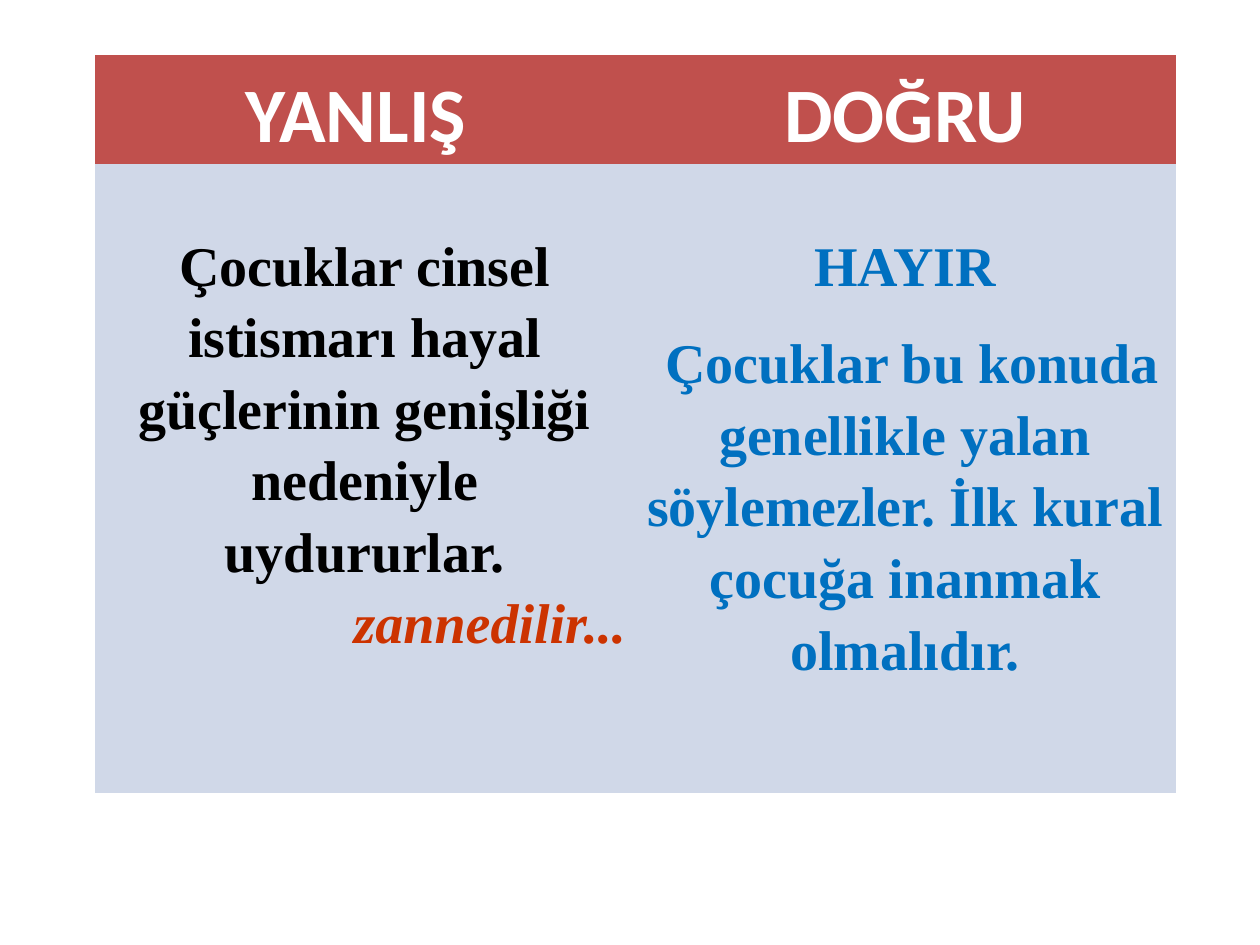
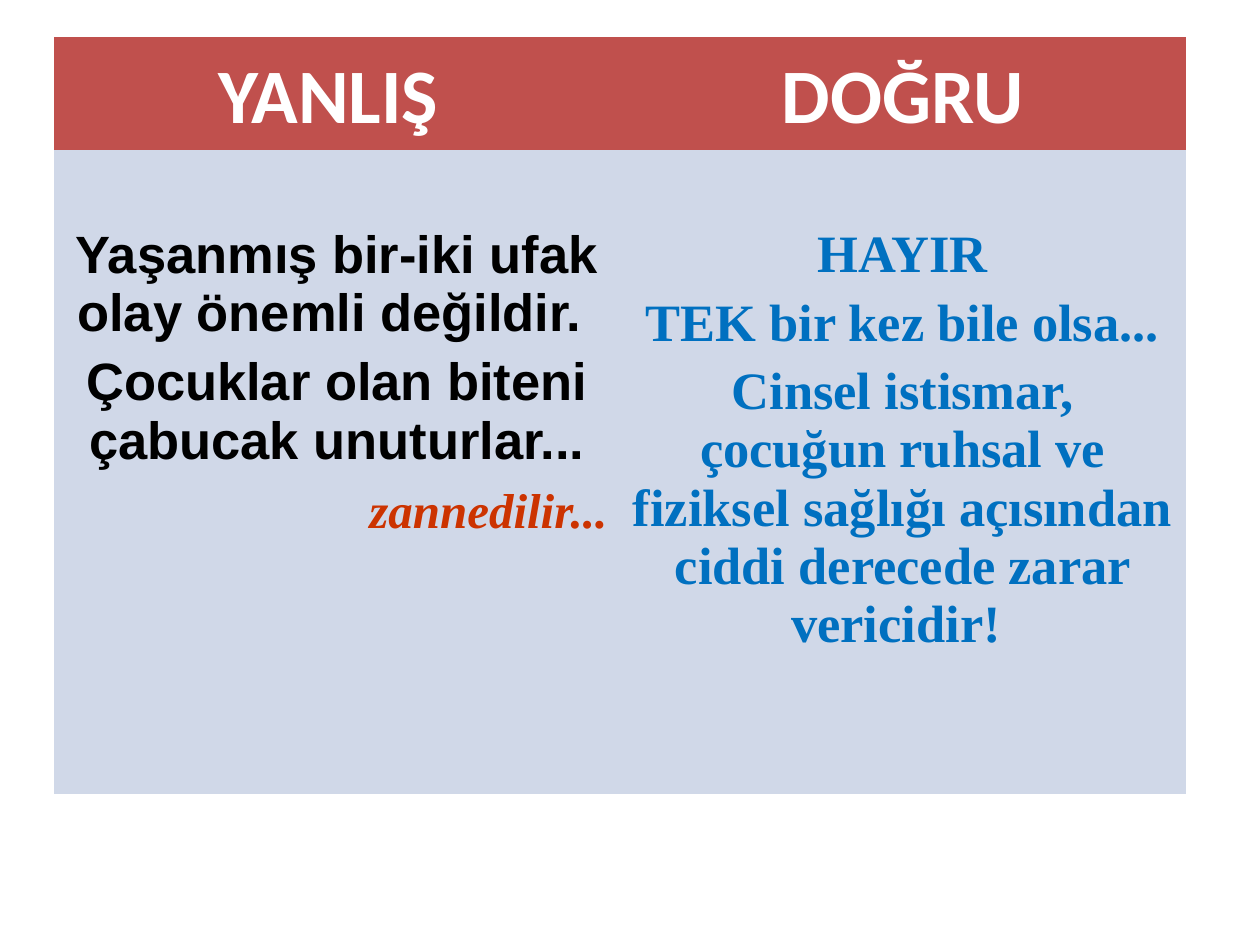
"""Builds two slides that set a common misbelief against the truth."""
from dataclasses import dataclass

from pptx import Presentation
from pptx import util as u
from pptx.dml.color import RGBColor
from pptx.enum import text
from pptx.oxml.ns import qn

RED, PALE, WHITE = "C0504D", "D0D8E8", "FFFFFF"
BLACK, BLUE, ORANGE = "000000", "0070C0", "CC3300"
SERIF, SANS, HEADING = "Times New Roman", "Arial", "Calibri"
CENTER, RIGHT = text.PP_ALIGN.CENTER, text.PP_ALIGN.RIGHT
NO_STYLE = "{2D5ABB26-0587-4C30-8999-92F81FD0307C}"


@dataclass(frozen=True)
class Para:
    """One paragraph and its look."""
    words: str
    size: int
    color: str
    font: str = SERIF
    align: int = CENTER
    italic: bool = False
    before: float = 0


@dataclass(frozen=True)
class Comparison:
    """One slide: table place, row heights, spacing and body paragraphs."""
    left: float
    top: float
    col_width: float
    row_heights: tuple[float, float]
    side_inset: float
    body_inset: float
    line_spacing: float
    wrong: list[Para]
    right: list[Para]


HEADINGS = [Para(words, 44, WHITE, HEADING) for words in ("YANLIŞ ", "DOĞRU")]

COMPARISONS = [
    Comparison(
        0.75, 0.44, 4.29, (0.86, 4.99), 0.07, 0.5, 1.15,
        [Para("Çocuklar cinsel istismarı hayal", 32, BLACK),
         Para("güçlerinin genişliği nedeniyle", 32, BLACK),
         Para("uydururlar.", 32, BLACK),
         Para("zannedilir...", 32, ORANGE, align=RIGHT, italic=True)],
        [Para("HAYIR", 32, BLUE),
         Para(" Çocuklar bu konuda genellikle yalan", 32, BLUE, before=15),
         Para("söylemezler. İlk kural çocuğa inanmak", 32, BLUE),
         Para("olmalıdır.", 32, BLUE)]),
    Comparison(
        0.43, 0.29, 4.49, (0.9, 5.11), 0.1, 0.6, 1.0,
        [Para("Yaşanmış bir-iki ufak olay önemli değildir. ", 30, BLACK, SANS),
         Para("Çocuklar olan biteni çabucak unuturlar...", 30, BLACK, SANS, before=6),
         Para("zannedilir...", 28, ORANGE, align=RIGHT, italic=True, before=8)],
        [Para("HAYIR", 30, BLUE),
         Para("TEK bir kez bile olsa...", 30, BLUE, before=6),
         Para("Cinsel istismar, çocuğun ruhsal ve fiziksel sağlığı açısından "
              "ciddi derecede zarar vericidir! ", 30, BLUE, before=6)]),
]


def rgb(color: str) -> RGBColor:
    return RGBColor.from_string(color)


def fill_cell(cell, paras: list[Para], fill: str, side: float, top: float,
              spacing: float) -> None:
    cell.fill.solid()
    cell.fill.fore_color.rgb = rgb(fill)
    cell.margin_left = cell.margin_right = u.Inches(side)
    cell.margin_top, cell.margin_bottom = u.Inches(top), u.Inches(0)
    tf = cell.text_frame
    tf.text = "\n".join(para.words for para in paras)
    for p, para in zip(tf.paragraphs, paras):
        p.alignment = para.align
        p.line_spacing = spacing
        p.space_before = u.Pt(para.before)
        for r in p.runs:
            r.font.name, r.font.size = para.font, u.Pt(para.size)
            r.font.bold, r.font.italic = True, para.italic
            r.font.color.rgb = rgb(para.color)


def add_comparison(prs, item: Comparison) -> None:
    s = prs.slides.add_slide(prs.slide_layouts[6])
    table = s.shapes.add_table(
        2, 2, u.Inches(item.left), u.Inches(item.top),
        u.Inches(2 * item.col_width), u.Inches(sum(item.row_heights))).table
    table.horz_banding = False
    table._tbl.tblPr.find(qn("a:tableStyleId")).text = NO_STYLE
    for row, height in zip(table.rows, item.row_heights):
        row.height = u.Inches(height)
    for col, (heading, body) in enumerate(zip(HEADINGS, (item.wrong, item.right))):
        table.columns[col].width = u.Inches(item.col_width)
        fill_cell(table.cell(0, col), [heading], RED, item.side_inset, 0, 1.15)
        fill_cell(table.cell(1, col), body, PALE, item.side_inset,
                  item.body_inset, item.line_spacing)


def main() -> None:
    prs = Presentation()
    prs.slide_width, prs.slide_height = u.Inches(10), u.Inches(7.5)
    for item in COMPARISONS:
        add_comparison(prs, item)
    prs.save("out.pptx")


if __name__ == "__main__":
    main()
